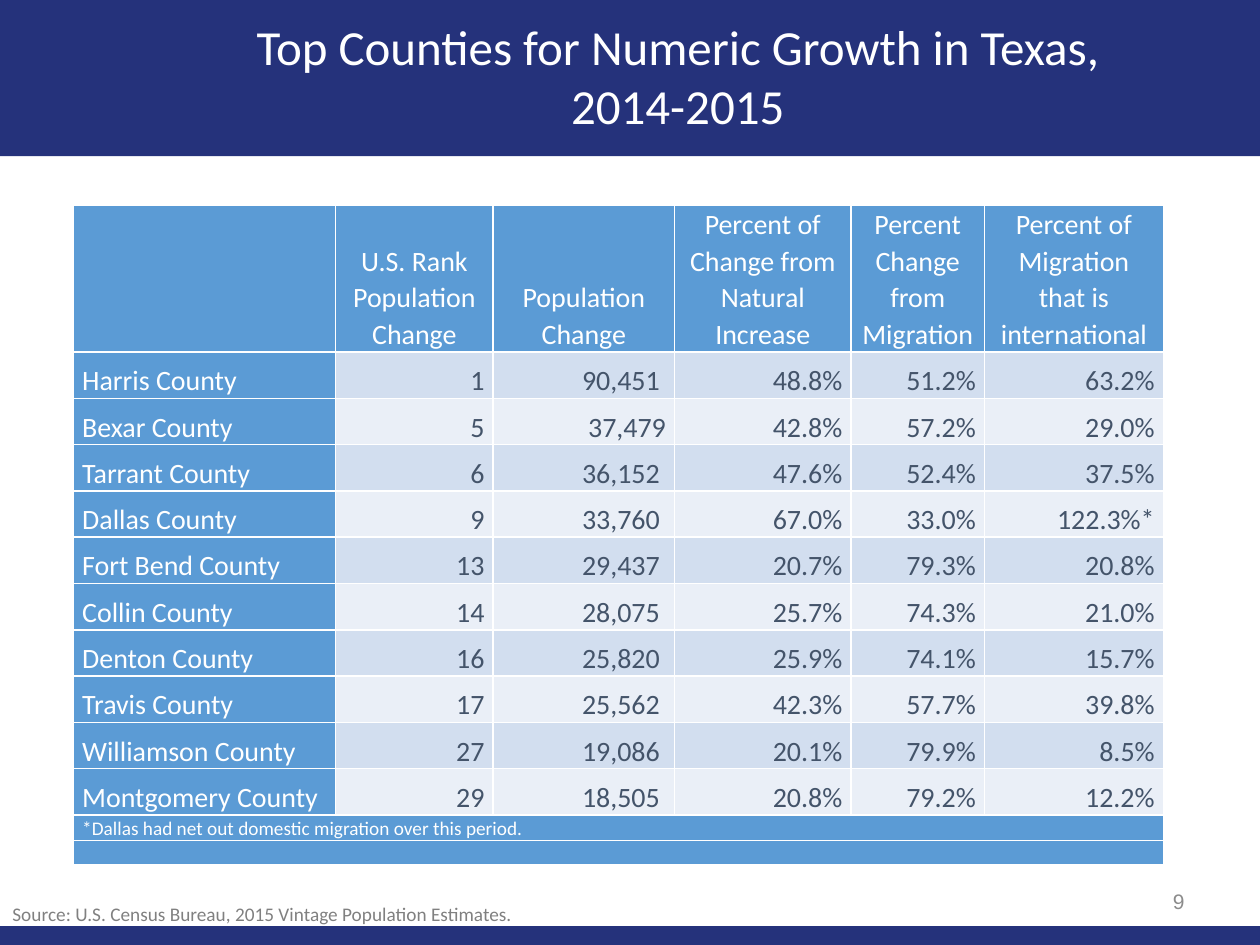
from typing import NamedTuple

import lxml.etree
import pptx
import pptx.dml.color
import pptx.enum.shapes
import pptx.enum.text
import pptx.oxml.ns
import pptx.util

Pt = pptx.util.Pt
ALIGN = pptx.enum.text.PP_ALIGN
ANCHOR = pptx.enum.text.MSO_ANCHOR
qn = pptx.oxml.ns.qn

NAVY, BLUE, WHITE, SLATE = "25327B", "5B9BD5", "FFFFFF", "44546A"
BANDS = ("D2DEEF", "EAEFF7")
COL_WIDTHS = (149.8, 90, 103.7, 100.8, 76.3, 102.2)
HEADER_HEIGHT, ROW_HEIGHT, NOTE_HEIGHT = 81.5, 26.45, 13.8
CELL_MARGIN = 5


class Box(NamedTuple):
    left: float
    top: float
    width: float
    height: float


class Style(NamedTuple):
    size: float
    color: str
    align: ALIGN = ALIGN.LEFT
    font: str = "Calibri"


class County(NamedTuple):
    name: str
    rank: str
    change: str
    natural: str
    migration: str
    international: str


HEADERS = ("", "U.S. Rank Population Change", "Population Change",
           "Percent of Change from Natural Increase",
           "Percent Change from Migration",
           "Percent of Migration that is international")
COUNTIES = (
    County("Harris County", "1", "90,451", "48.8%", "51.2%", "63.2%"),
    County("Bexar County", "5", "37,479", "42.8%", "57.2%", "29.0%"),
    County("Tarrant County", "6", "36,152", "47.6%", "52.4%", "37.5%"),
    County("Dallas County", "9", "33,760", "67.0%", "33.0%", "122.3%*"),
    County("Fort Bend County", "13", "29,437", "20.7%", "79.3%", "20.8%"),
    County("Collin County", "14", "28,075", "25.7%", "74.3%", "21.0%"),
    County("Denton County", "16", "25,820", "25.9%", "74.1%", "15.7%"),
    County("Travis County", "17", "25,562", "42.3%", "57.7%", "39.8%"),
    County("Williamson County", "27", "19,086", "20.1%", "79.9%", "8.5%"),
    County("Montgomery County", "29", "18,505", "20.8%", "79.2%", "12.2%"),
)
NOTES = ("*Dallas had net out domestic migration over this period.", "")

HEADER = Style(16, WHITE, ALIGN.CENTER)
NAME = Style(16, WHITE)
VALUE = Style(16, SLATE, ALIGN.RIGHT)
NOTE = Style(11, WHITE)


def rgb(color: str) -> pptx.dml.color.RGBColor:
    return pptx.dml.color.RGBColor.from_string(color)


def set_text(tf, text: str, style: Style) -> None:
    tf.text = text
    p = tf.paragraphs[0]
    p.alignment = style.align
    p.font.size = Pt(style.size)
    p.font.name = style.font
    p.font.color.rgb = rgb(style.color)


def place(sp, box: Box) -> None:
    sp.left, sp.top, sp.width, sp.height = map(Pt, box)


def add_bar(s, box: Box):
    sp = s.shapes.add_shape(pptx.enum.shapes.MSO_SHAPE.RECTANGLE, *map(Pt, box))
    sp.shadow.inherit = False
    sp.fill.solid()
    sp.fill.fore_color.rgb = rgb(NAVY)
    sp.line.fill.background()
    return sp


def add_label(s, box: Box, text: str, style: Style, anchor: ANCHOR, wrap: bool) -> None:
    tf = s.shapes.add_textbox(*map(Pt, box)).text_frame
    tf.word_wrap = wrap
    tf.vertical_anchor = anchor
    set_text(tf, text, style)


def add_borders(cell, color: str, width: float) -> None:
    """Line all four sides; the lines must precede the cell's fill."""
    tcPr = cell._tc.get_or_add_tcPr()
    for i, side in enumerate(("lnL", "lnR", "lnT", "lnB")):
        ln = lxml.etree.Element(qn(f"a:{side}"), w=str(Pt(width)))
        fill = lxml.etree.SubElement(ln, qn("a:solidFill"))
        lxml.etree.SubElement(fill, qn("a:srgbClr"), val=color)
        tcPr.insert(i, ln)


def fill_cell(cell, text: str, style: Style, fill: str, right: float = CELL_MARGIN) -> None:
    cell.margin_left, cell.margin_right = Pt(CELL_MARGIN), Pt(right)
    cell.margin_top = cell.margin_bottom = 0
    cell.vertical_anchor = ANCHOR.BOTTOM
    cell.fill.solid()
    cell.fill.fore_color.rgb = rgb(fill)
    add_borders(cell, WHITE, 1)
    set_text(cell.text_frame, text, style)
    p = cell.text_frame.paragraphs[0]
    p.line_spacing = 1.07
    if not text:
        lxml.etree.SubElement(p._p, qn("a:endParaRPr"), sz="1000")


def add_county_table(s) -> None:
    heights = [HEADER_HEIGHT] + [ROW_HEIGHT] * len(COUNTIES) + [NOTE_HEIGHT] * len(NOTES)
    box = Box(42, 117.5, sum(COL_WIDTHS), sum(heights))
    table = s.shapes.add_table(len(heights), len(COL_WIDTHS), *map(Pt, box)).table
    table.horz_banding = False
    for col, width in zip(table.columns, COL_WIDTHS):
        col.width = Pt(width)
    for row, height in zip(table.rows, heights):
        row.height = Pt(height)

    for c, text in enumerate(HEADERS):
        fill_cell(table.cell(0, c), text, HEADER, BLUE)
    for r, county in enumerate(COUNTIES, 1):
        fill_cell(table.cell(r, 0), county.name, NAME, BLUE)
        for c, text in enumerate(county[1:], 1):
            inset = c == 2 and county.name != "Bexar County"
            fill_cell(table.cell(r, c), text, VALUE, BANDS[(r - 1) % 2],
                      CELL_MARGIN + 3.5 * inset)
    for r, text in enumerate(NOTES, len(COUNTIES) + 1):
        table.cell(r, 0).merge(table.cell(r, len(COL_WIDTHS) - 1))
        fill_cell(table.cell(r, 0), text, NOTE, BLUE)


def main() -> None:
    prs = pptx.Presentation()
    prs.slide_width, prs.slide_height = Pt(720), Pt(540)
    s = prs.slides.add_slide(prs.slide_layouts[5])

    title = s.shapes.title
    for box in (Box(0, 0, 720, 89.3), Box(0, 529.2, 720, 10.8)):
        title.element.addprevious(add_bar(s, box).element)
    place(title, Box(138.2, 5.8, 498.2, 74.9))
    title.text_frame.vertical_anchor = ANCHOR.TOP
    set_text(title.text_frame, "Top Counties for Numeric Growth in Texas, 2014-2015",
             Style(28, WHITE, ALIGN.CENTER))

    add_county_table(s)
    add_label(s, Box(516.2, 500.4, 167.8, 28.8), "9",
              Style(12, "8C8C8C", ALIGN.RIGHT, "Arial"), ANCHOR.MIDDLE, True)
    add_label(s, Box(0, 511.9, 342, 20.9),
              "Source: U.S. Census Bureau, 2015 Vintage Population Estimates.",
              Style(11, "808080"), ANCHOR.TOP, False)
    prs.save("out.pptx")


if __name__ == "__main__":
    main()
